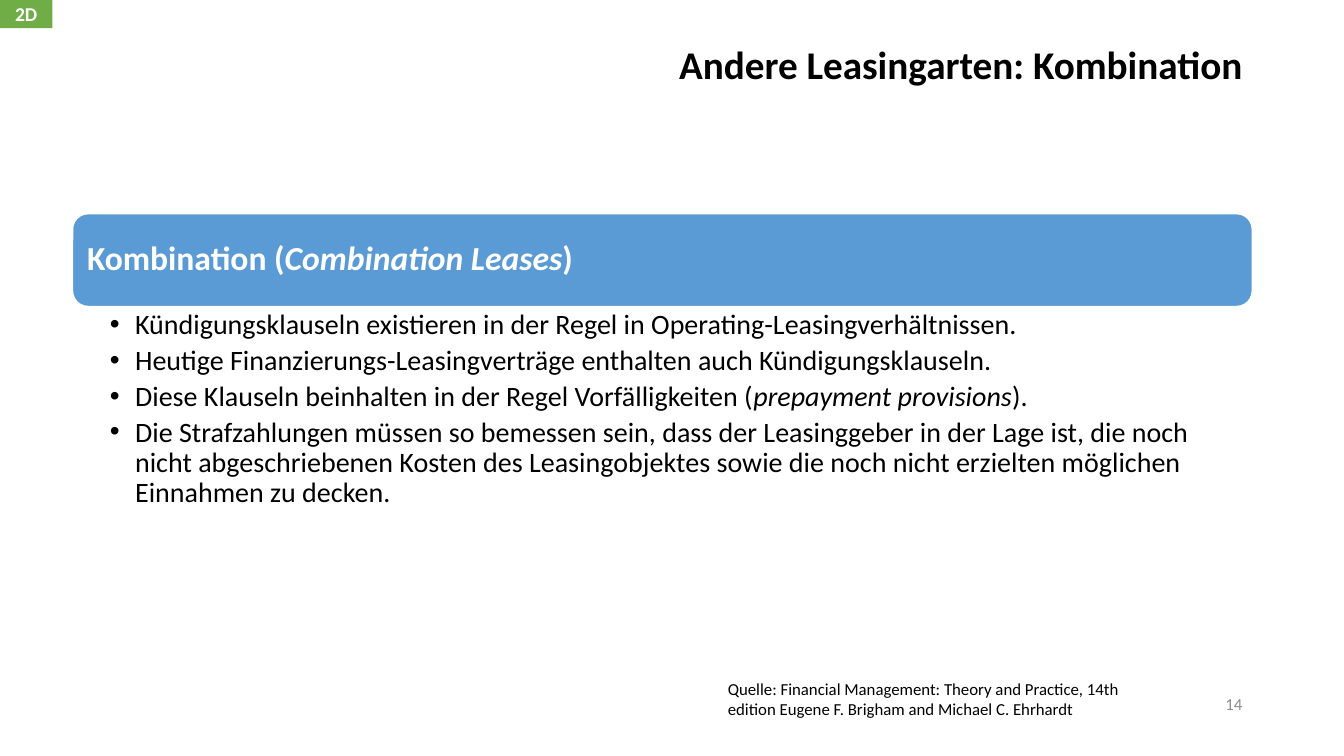
from lxml import etree
from pptx import Presentation
from pptx.dml.color import RGBColor
from pptx.enum.shapes import MSO_SHAPE
from pptx.enum.text import MSO_ANCHOR, PP_ALIGN
from pptx.oxml.ns import qn
from pptx.util import Inches, Pt

TITLE = "Andere Leasingarten: Kombination"
BADGE = "2D"
PAGE_NUMBER = "14"
SOURCE = ("Quelle: Financial Management: Theory and Practice, 14th edition "
          "Eugene F. Brigham and Michael C. Ehrhardt")
# Spans at odd positions within a tuple are italic.
HEADING = ("Kombination (", "Combination Leases", ")")
CLAUSES = [
    ("Kündigungsklauseln existieren in der Regel in Operating-Leasingverhältnissen.",),
    ("Heutige Finanzierungs-Leasingverträge enthalten auch Kündigungsklauseln.",),
    ("Diese Klauseln beinhalten in der Regel Vorfälligkeiten (", "prepayment provisions", ")."),
    ("Die Strafzahlungen müssen so bemessen sein, dass der Leasinggeber in der Lage ist, "
     "die noch nicht abgeschriebenen Kosten des Leasingobjektes sowie die noch nicht "
     "erzielten möglichen Einnahmen zu decken.",),
]

FONT = "Calibri"
BLACK = RGBColor(0x00, 0x00, 0x00)
WHITE = RGBColor(0xFF, 0xFF, 0xFF)
BLUE = RGBColor(0x5B, 0x9B, 0xD5)
GREEN = RGBColor(0x70, 0xAD, 0x47)
GRAY = RGBColor(0x8C, 0x8C, 0x8C)
LEFT, CENTER, RIGHT = PP_ALIGN.LEFT, PP_ALIGN.CENTER, PP_ALIGN.RIGHT
TOP, MIDDLE = MSO_ANCHOR.TOP, MSO_ANCHOR.MIDDLE
RECTANGLE, ROUNDED = MSO_SHAPE.RECTANGLE, MSO_SHAPE.ROUNDED_RECTANGLE

CONTENT_LEFT, CONTENT_WIDTH = 0.72, 11.7
HEADING_TOP, HEADING_HEIGHT = 2.12, 0.92
BULLET_INDENT = 0.25


def add_bar(page, preset, place, fill):
    bar = page.shapes.add_shape(preset, *map(Inches, place))
    bar.shadow.inherit = False
    bar.fill.solid()
    bar.fill.fore_color.rgb = fill
    bar.line.fill.background()
    return bar


def add_box(page, place):
    return page.shapes.add_textbox(*map(Inches, place))


def add_bullet(para):
    properties = para._p.get_or_add_pPr()
    properties.set("marL", str(Inches(BULLET_INDENT)))
    properties.set("indent", str(-Inches(BULLET_INDENT)))
    etree.SubElement(properties, qn("a:buFont")).set("typeface", "Arial")
    etree.SubElement(properties, qn("a:buChar")).set("char", "•")


def write(box, paragraphs, size, color=BLACK, bold=False, align=LEFT, anchor=TOP,
          insets=(0.1, 0.05, 0.1, 0.05), spacing=1.0, after=0, bullets=False):
    """Fill a shape with paragraphs, each a tuple of alternating upright and italic spans."""
    frame = box.text_frame
    frame.word_wrap = True
    frame.vertical_anchor = anchor
    (frame.margin_left, frame.margin_top,
     frame.margin_right, frame.margin_bottom) = map(Inches, insets)
    for index, spans in enumerate(paragraphs):
        para = frame.add_paragraph() if index else frame.paragraphs[0]
        if bullets:
            add_bullet(para)
        para.alignment = align
        para.line_spacing = spacing
        para.space_after = Pt(after)
        for position, text in enumerate(spans):
            span = para.add_run()
            span.text = text
            span.font.name = FONT
            span.font.size = Pt(size)
            span.font.bold = bold
            span.font.italic = position % 2 == 1
            span.font.color.rgb = color


def main():
    deck = Presentation()
    deck.slide_width, deck.slide_height = Inches(13.33), Inches(7.5)
    page = deck.slides.add_slide(deck.slide_layouts[6])

    heading = add_bar(page, ROUNDED,
                      (CONTENT_LEFT, HEADING_TOP, CONTENT_WIDTH, HEADING_HEIGHT), BLUE)
    heading.line.color.rgb = WHITE
    heading.line.width = Pt(1)
    write(heading, [HEADING], 24, color=WHITE, bold=True, anchor=MIDDLE,
          insets=(0.1, 0.1, 0.1, 0.1), spacing=0.9)

    clauses = add_box(page, (CONTENT_LEFT, HEADING_TOP + HEADING_HEIGHT + 0.01,
                             CONTENT_WIDTH, 2.1))
    write(clauses, CLAUSES, 20, insets=(0.37, 0.03, 0.16, 0.03), spacing=0.9,
          after=4, bullets=True)

    write(add_box(page, (0.92, 0.4, 11.5, 0.58)), [(TITLE,)], 28, bold=True,
          align=RIGHT, spacing=0.9)
    write(add_bar(page, RECTANGLE, (0, 0, 0.52, 0.28), GREEN), [(BADGE,)], 14,
          color=WHITE, bold=True, align=CENTER, anchor=MIDDLE)
    write(add_box(page, (9.42, 6.78, 3, 0.4)), [(PAGE_NUMBER,)], 12,
          color=GRAY, align=RIGHT, anchor=MIDDLE)
    write(add_box(page, (7.12, 6.68, 4.22, 0.5)), [(SOURCE,)], 12)

    deck.save("out.pptx")


if __name__ == "__main__":
    main()
